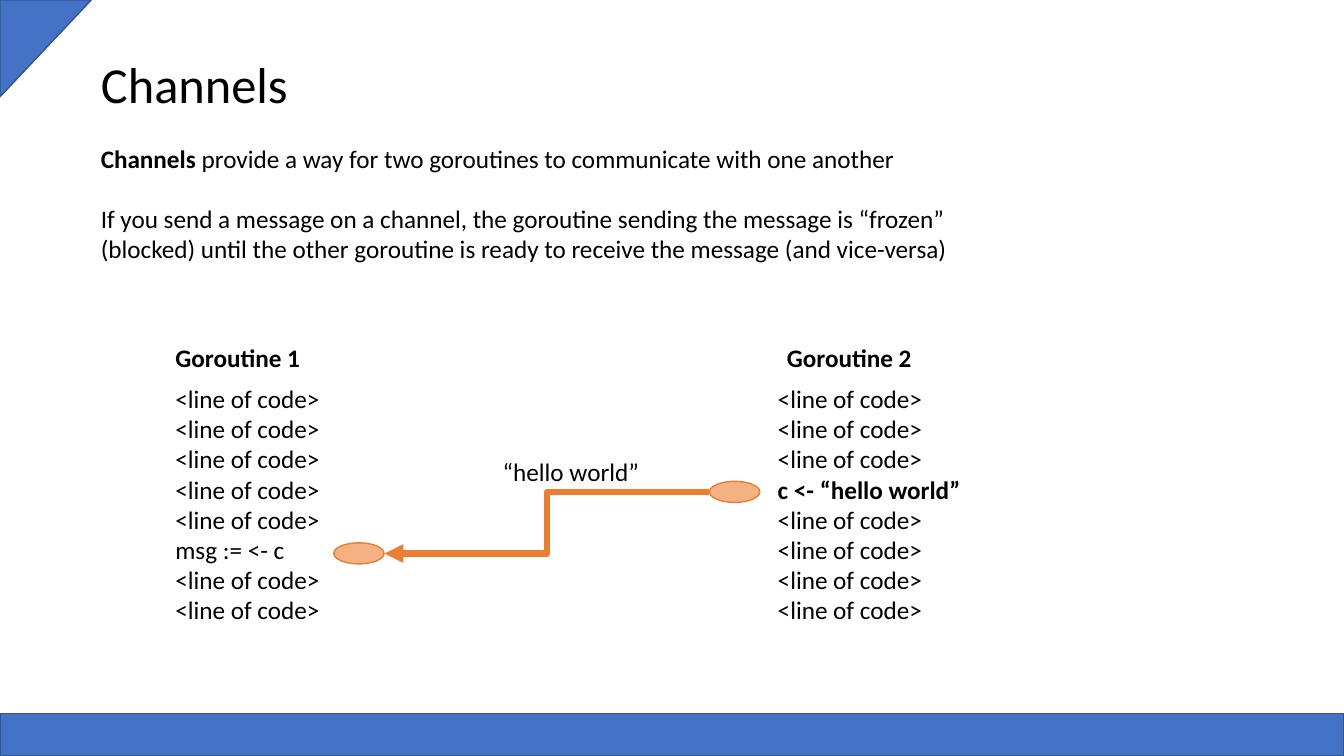
from dataclasses import dataclass

from lxml.etree import SubElement
from pptx import Presentation
from pptx.dml.color import RGBColor
from pptx.enum.shapes import MSO_CONNECTOR, MSO_SHAPE as SHAPE
from pptx.enum.text import MSO_ANCHOR, MSO_AUTO_SIZE, PP_ALIGN
from pptx.oxml.ns import qn
from pptx.util import Cm, Pt


@dataclass(frozen=True)
class Theme:
    font: str = "Calibri"
    title: Pt = Pt(36)
    body: Pt = Pt(18)
    text: RGBColor = RGBColor(0x00, 0x00, 0x00)
    blue: RGBColor = RGBColor(0x44, 0x72, 0xC4)
    blue_edge: RGBColor = RGBColor(0x32, 0x54, 0x91)
    orange: RGBColor = RGBColor(0xED, 0x7D, 0x31)
    peach: RGBColor = RGBColor(0xF4, 0xB1, 0x83)


theme = Theme()

deck = Presentation()
deck.slide_width, deck.slide_height = Cm(33.87), Cm(19.05)
slide = deck.slides.add_slide(deck.slide_layouts[5])


def write(box, paragraphs, size=theme.body, wrap=False, gap=0):
    frame = box.text_frame
    frame.word_wrap = wrap
    frame.auto_size = MSO_AUTO_SIZE.NONE
    frame.vertical_anchor = MSO_ANCHOR.TOP
    for index, runs in enumerate(paragraphs):
        paragraph = frame.add_paragraph() if index else frame.paragraphs[0]
        paragraph.alignment = PP_ALIGN.LEFT
        paragraph.space_before = Pt(gap if index else 0)
        for text, bold in runs:
            run = paragraph.add_run()
            run.text = text
            run.font.name = theme.font
            run.font.size = size
            run.font.bold = bold
            run.font.color.rgb = theme.text


def draw(kind, left, top, width, height, fill, edge):
    shape = slide.shapes.add_shape(kind, Cm(left), Cm(top), Cm(width), Cm(height))
    shape.shadow.inherit = False
    shape.fill.solid()
    shape.fill.fore_color.rgb = fill
    shape.line.color.rgb = edge
    shape.line.width = Pt(1)
    return shape


draw(SHAPE.RECTANGLE, 0, 17.98, 33.87, 1.07, theme.blue, theme.blue_edge)
corner = draw(SHAPE.RIGHT_TRIANGLE, -0.07, 0.07, 2.44, 2.3, theme.blue, theme.blue_edge)
corner.rotation = 90

title = slide.shapes.title
title.left, title.top, title.width, title.height = Cm(2.29), Cm(1.22), Cm(5.26), Cm(1.8)
write(title, [[("Channels", False)]], theme.title)

explanation = slide.shapes.add_textbox(Cm(2.29), Cm(3.48), Cm(23.57), Cm(3.33))
write(explanation, [
    [("Channels", True),
     (" provide a way for two goroutines to communicate with one another", False)],
    [("If you send a message on a channel, the goroutine sending the message is “frozen” "
      "(blocked) until the other goroutine is ready to receive the message (and vice-versa)",
      False)],
], wrap=True, gap=21.6)

code_line = [("<line of code>", False)]
receiver_code = [code_line] * 5 + [[("msg := <- c", False)]] + [code_line] * 2
sender_code = [code_line] * 3 + [[("c <- “hello world”", True)]] + [code_line] * 4

for heading, heading_left, code, code_left, code_width in [
    ("Goroutine 1", 4.17, receiver_code, 4.17, 4.24),
    ("Goroutine 2", 19.58, sender_code, 19.35, 5.16),
]:
    name = slide.shapes.add_textbox(Cm(heading_left), Cm(8.51), Cm(4.88), Cm(1.02))
    write(name, [[(heading, True)]], wrap=True)
    listing = slide.shapes.add_textbox(Cm(code_left), Cm(9.53), Cm(code_width), Cm(7.95))
    write(listing, code)

for port_left, port_top in [(8.41, 13.68), (17.88, 12.13)]:
    draw(SHAPE.OVAL, port_left, port_top, 1.27, 0.53, theme.peach, theme.orange)

channel = slide.shapes.add_connector(
    MSO_CONNECTOR.ELBOW, Cm(17.88), Cm(12.4), Cm(9.69), Cm(13.95))
channel.line.color.rgb = theme.orange
channel.line.width = Pt(4.5)
SubElement(channel.line._get_or_add_ln(), qn("a:tailEnd"), type="triangle")
SubElement(channel._element.spPr, qn("a:effectLst"))

message = slide.shapes.add_textbox(Cm(12.42), Cm(11.38), Cm(3.99), Cm(1.02))
write(message, [[("“hello world”", False)]])

deck.save("out.pptx")
